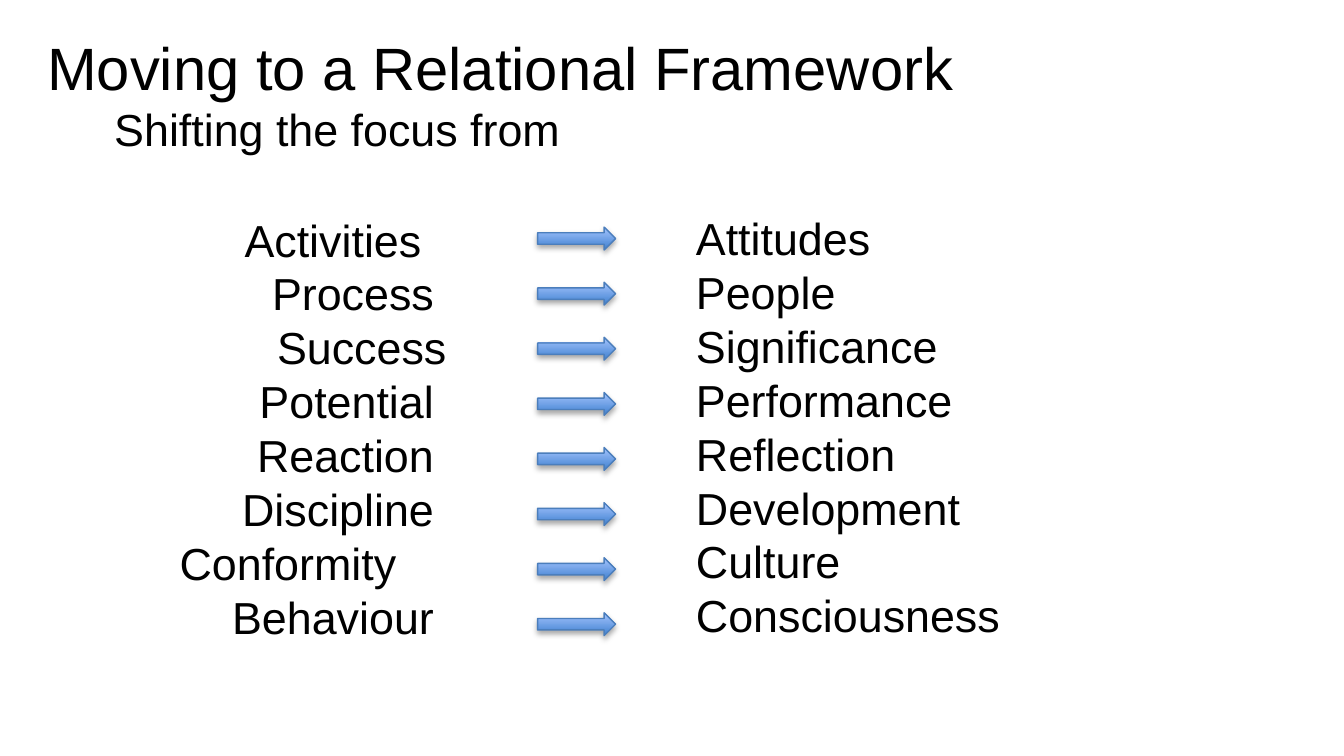
from dataclasses import dataclass

from lxml.etree import SubElement
from pptx import Presentation
from pptx.dml.color import RGBColor
from pptx.enum.shapes import MSO_SHAPE
from pptx.enum.text import MSO_ANCHOR, MSO_AUTO_SIZE, PP_ALIGN
from pptx.oxml.ns import qn
from pptx.util import Inches, Pt


@dataclass(frozen=True)
class Theme:
    font: str = "Arial"
    text: str = "000000"
    title_size: float = 32
    body_size: float = 24
    body_pitch: float = 28.85
    arrow_dark: str = "3F80CE"
    arrow_light: str = "A4C4FF"
    arrow_line: str = "4B7EBC"
    shadow: str = "000000"


THEME = Theme()
SPACE = 0.28 * THEME.body_size / 72  # width of one space, in inches

# from, to, spaces between the first word and the column's right edge
SHIFTS = [
    ("Activities", "Attitudes", 4),
    ("Process", "People", 3),
    ("Success", "Significance", 2),
    ("Potential", "Performance", 3),
    ("Reaction", "Reflection", 3),
    ("Discipline", "Development", 3),
    ("Conformity", "Culture", 6),
    ("Behaviour", "Consciousness", 3),
]


def add_tab_stop(paragraph, position, align="l"):
    tabs = SubElement(paragraph._p.get_or_add_pPr(), qn("a:tabLst"))
    SubElement(tabs, qn("a:tab"), pos=str(Inches(position)), algn=align)


def format_runs(paragraph, size):
    for run in paragraph.runs:
        run.font.name = THEME.font
        run.font.size = Pt(size)
        run.font.color.rgb = RGBColor.from_string(THEME.text)


def place_title(slide, left, top, width, height):
    title = slide.shapes.title
    title.left, title.top = Inches(left), Inches(top)
    title.width, title.height = Inches(width), Inches(height)
    frame = title.text_frame
    frame.text = "Moving to a Relational Framework\n\tShifting the focus from"
    frame.word_wrap = True
    frame.auto_size = MSO_AUTO_SIZE.NONE
    frame.vertical_anchor = MSO_ANCHOR.BOTTOM
    heading, subheading = frame.paragraphs
    add_tab_stop(subheading, 0.5)
    for paragraph, size in ((heading, THEME.title_size), (subheading, THEME.body_size)):
        paragraph.alignment = PP_ALIGN.LEFT
        format_runs(paragraph, size)


def add_word_column(slide, left, top, width, height, words, right_gaps=None):
    """Add one word per line; right_gaps ends each word that far from the right."""
    box = slide.shapes.add_textbox(
        Inches(left), Inches(top), Inches(width), Inches(height))
    frame = box.text_frame
    frame.word_wrap = True
    prefix = "\t" if right_gaps else ""
    frame.text = "\n".join(prefix + word for word in words)
    inner_width = width - 0.2
    for index, paragraph in enumerate(frame.paragraphs):
        if right_gaps:
            add_tab_stop(paragraph, inner_width - right_gaps[index], "r")
        paragraph.line_spacing = Pt(THEME.body_pitch)
        format_runs(paragraph, THEME.body_size)


def add_soft_shadow(shape):
    effects = SubElement(shape._element.spPr, qn("a:effectLst"))
    shadow = SubElement(
        effects, qn("a:outerShdw"), blurRad=str(Pt(3.1)), dist=str(Pt(1.8)),
        dir="5400000", rotWithShape="0")
    color = SubElement(shadow, qn("a:srgbClr"), val=THEME.shadow)
    SubElement(color, qn("a:alpha"), val="35000")


def add_arrow_column(slide, left, top, width, height, count, pitch):
    for row in range(count):
        arrow = slide.shapes.add_shape(
            MSO_SHAPE.RIGHT_ARROW, Inches(left), Inches(top + row * pitch),
            Inches(width), Inches(height))
        arrow.fill.gradient()
        arrow.fill.gradient_angle = 90
        colors = (THEME.arrow_dark, THEME.arrow_light)
        for position, (stop, color) in enumerate(zip(arrow.fill.gradient_stops, colors)):
            stop.position = position
            stop.color.rgb = RGBColor.from_string(color)
        arrow.line.color.rgb = RGBColor.from_string(THEME.arrow_line)
        arrow.line.width = Pt(0.75)
        add_soft_shadow(arrow)


def main():
    presentation = Presentation()
    presentation.slide_width = Inches(10)
    presentation.slide_height = Inches(10 * 9 / 16)
    slide = presentation.slides.add_slide(presentation.slide_layouts[5])

    old_words, new_words, spaces = zip(*SHIFTS)
    place_title(slide, 0.25, 0.04, 9.08, 1.17)
    add_word_column(slide, 5.08, 1.52, 3.58, 3.83, new_words)
    add_word_column(slide, 0.61, 1.53, 3, 3.83, old_words,
                    [count * SPACE for count in spaces])
    add_arrow_column(slide, 4, 1.69, 0.58, 0.17, len(SHIFTS), 0.41)
    presentation.save("out.pptx")


if __name__ == "__main__":
    main()
